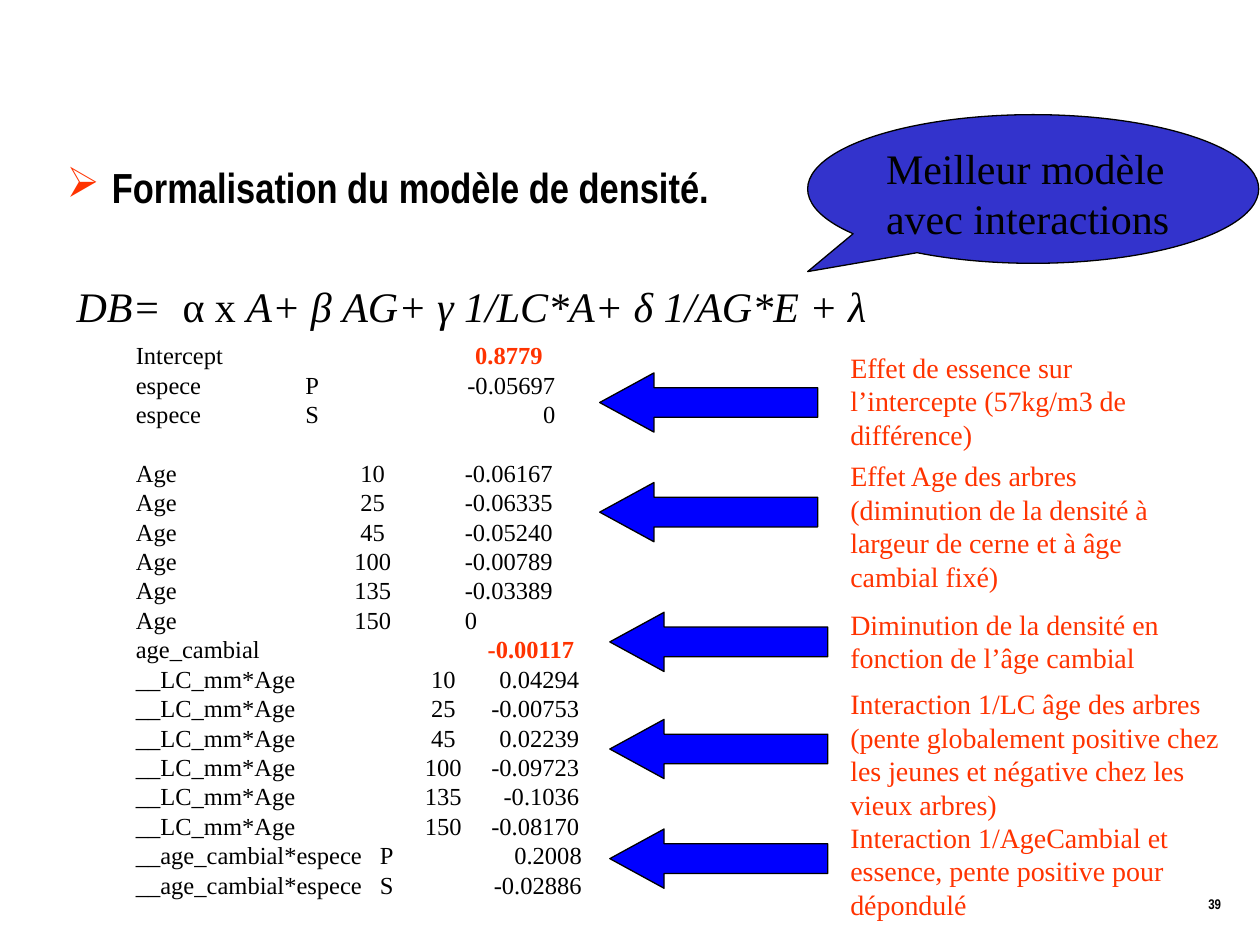
from lxml.etree import SubElement
from pptx import Presentation
from pptx.dml.color import RGBColor
from pptx.enum.shapes import MSO_SHAPE as Preset
from pptx.enum.text import MSO_ANCHOR as Anchor, PP_ALIGN as Align
from pptx.oxml.ns import qn
from pptx.util import Inches, Pt

BLACK = RGBColor(0x00, 0x00, 0x00)
ORANGE = RGBColor(0xFF, 0x33, 0x00)
INDIGO = RGBColor(0x33, 0x33, 0xCC)
BLUE = RGBColor(0x00, 0x00, 0xFF)
SERIF, NARROW = "Times New Roman", "Arial Narrow"

presentation = Presentation()
presentation.slide_width, presentation.slide_height = Inches(10), Inches(7.5)
slide = presentation.slides.add_slide(presentation.slide_layouts[6])

# Grid of 100 columns by 75 rows
COLUMN = presentation.slide_width // 100
ROW = presentation.slide_height // 75


def add_text(left, top, width, height, text, size, font=SERIF, color=BLACK, bold=False):
    box = slide.shapes.add_textbox(
        int(left * COLUMN), int(top * ROW), int(width * COLUMN), int(height * ROW))
    box.text_frame.word_wrap = True
    box.text_frame.text = text
    for paragraph in box.text_frame.paragraphs:
        for run in paragraph.runs:
            run.font.name, run.font.size, run.font.bold = font, Pt(size), bold
            run.font.color.rgb = color
    return box.text_frame


def add_outlined(preset, left, top, width, height, fill, adjustments):
    shape = slide.shapes.add_shape(
        preset, int(left * COLUMN), int(top * ROW), int(width * COLUMN), int(height * ROW))
    shape.shadow.inherit = False
    shape.fill.solid()
    shape.fill.fore_color.rgb = fill
    shape.line.color.rgb = BLACK
    shape.line.width = Pt(0.75)
    for index, value in enumerate(adjustments):
        shape.adjustments[index] = value
    return shape


# Slide number
number = add_text(92.6, 70.6, 5.3, 2.1, "39", 8, NARROW, bold=True)
number.paragraphs[0].alignment = Align.RIGHT

# Heading with its arrow bullet
heading = add_text(4.3, 11.5, 92.9, 6.7, "Formalisation du modèle de densité.", 24, NARROW, bold=True)
heading.vertical_anchor = Anchor.MIDDLE
properties = heading.paragraphs[0]._p.get_or_add_pPr()
properties.set("marL", str(int(3.6 * COLUMN)))
properties.set("indent", str(-int(3.6 * COLUMN)))
bullet_color = SubElement(properties, qn("a:buClr"))
SubElement(bullet_color, qn("a:srgbClr"), val=str(ORANGE))
SubElement(properties, qn("a:buChar"), char="➢")

# Model formula, in italics except for its first term
formula = add_text(5.1, 21.8, 68.5, 5, "", 24).paragraphs[0]
tab_list = SubElement(formula._p.get_or_add_pPr(), qn("a:tabLst"))
SubElement(tab_list, qn("a:tab"), pos=str(int(8.4 * COLUMN)), algn="l")
for text, italic in (("DB=\t", True), ("α x ", False), ("A+ β AG+ γ 1/LC*A+ δ 1/AG*E + λ", True)):
    run = formula.add_run()
    run.text = text
    run.font.name, run.font.size, run.font.italic = SERIF, Pt(24), italic
    run.font.color.rgb = BLACK

# Callout
callout = add_outlined(Preset.OVAL_CALLOUT, 64.1, 9.1, 35.8, 11.8, INDIGO, (-0.5, 0.556))
callout.text_frame.word_wrap = True
callout.text_frame.vertical_anchor = Anchor.TOP
callout.text_frame.text = "Meilleur modèle avec interactions"
paragraph = callout.text_frame.paragraphs[0]
paragraph.alignment = Align.LEFT
paragraph.runs[0].font.name, paragraph.runs[0].font.size = SERIF, Pt(24)
paragraph.runs[0].font.color.rgb = BLACK

# Coefficients: effect, centre of the level column, right edge of the values, rows
COEFFICIENTS = [
    ("Intercept", None, 32.3, [("", "0.8779")]),
    ("espece", 14, 33.3, [("P", "-0.05697"), ("S", "0")]),
    ("Age", 18.8, 33.1, [("10", "-0.06167"), ("25", "-0.06335"), ("45", "-0.05240"),
                         ("100", "-0.00789"), ("135", "-0.03389")]),
    ("Age", 18.8, 27.1, [("150", "0")]),
    ("age_cambial", None, 34.8, [("", "-0.00117")]),
    ("__LC_mm*Age", 24.4, 35.2, [("10", "0.04294"), ("25", "-0.00753"), ("45", "0.02239"),
                                 ("100", "-0.09723"), ("135", "-0.1036"), ("150", "-0.08170")]),
    ("__age_cambial*espece", 19.9, 35.4, [("P", "0.2008"), ("S", "-0.02886")]),
]
frame = add_text(9.8, 26.5, 38.6, 45.8, "", 14)
paragraph = frame.paragraphs[0]
for effect, level_stop, value_stop, rows in COEFFICIENTS:
    for level, value in rows:
        if paragraph.runs:
            paragraph = frame.add_paragraph()
        tab_list = SubElement(paragraph._p.get_or_add_pPr(), qn("a:tabLst"))
        for stop, side in ((level_stop, "ctr"), (value_stop, "r")):
            if stop:
                SubElement(tab_list, qn("a:tab"), pos=str(int(stop * COLUMN)), algn=side)
        if level == "10" and effect == "Age":
            paragraph.space_before = Pt(16.8)
        label = f"{effect}\t{level}\t" if level else f"{effect}\t"
        for text, highlighted in ((label, False), (value, not level)):
            run = paragraph.add_run()
            run.text = text
            run.font.name, run.font.size, run.font.bold = SERIF, Pt(14), highlighted
            run.font.color.rgb = ORANGE if highlighted else BLACK

# Comments, each with an arrow to its coefficients:
# arrow left and top, then comment top, width, height and text
COMMENTS = [
    (47.6, 29.6, 27.3, 27.2, 9.1, "Effet de essence sur l’intercepte (57kg/m3 de différence)"),
    (47.6, 38.3, 35.9, 27.2, 11.8, "Effet Age des arbres (diminution de la densité à "
                                   "largeur de cerne et à âge cambial fixé)"),
    (48.4, 48.6, 47.7, 27.2, 6.4, "Diminution de la densité en fonction de l’âge cambial"),
    (48.4, 57.1, 54, 33.5, 11.8, "Interaction 1/LC âge des arbres (pente globalement positive chez "
                                 "les jeunes et négative chez les vieux arbres)"),
    (48.4, 65.8, 64.6, 33.5, 9.1, "Interaction 1/AgeCambial et essence, pente positive pour dépondulé"),
]
for arrow_left, arrow_top, top, width, height, text in COMMENTS:
    add_outlined(Preset.LEFT_ARROW, arrow_left, arrow_top, 17.3, 4.7, BLUE, (0.5, 0.917))
    add_text(66.5, top, width, height, text, 16, color=ORANGE)

presentation.save("out.pptx")
